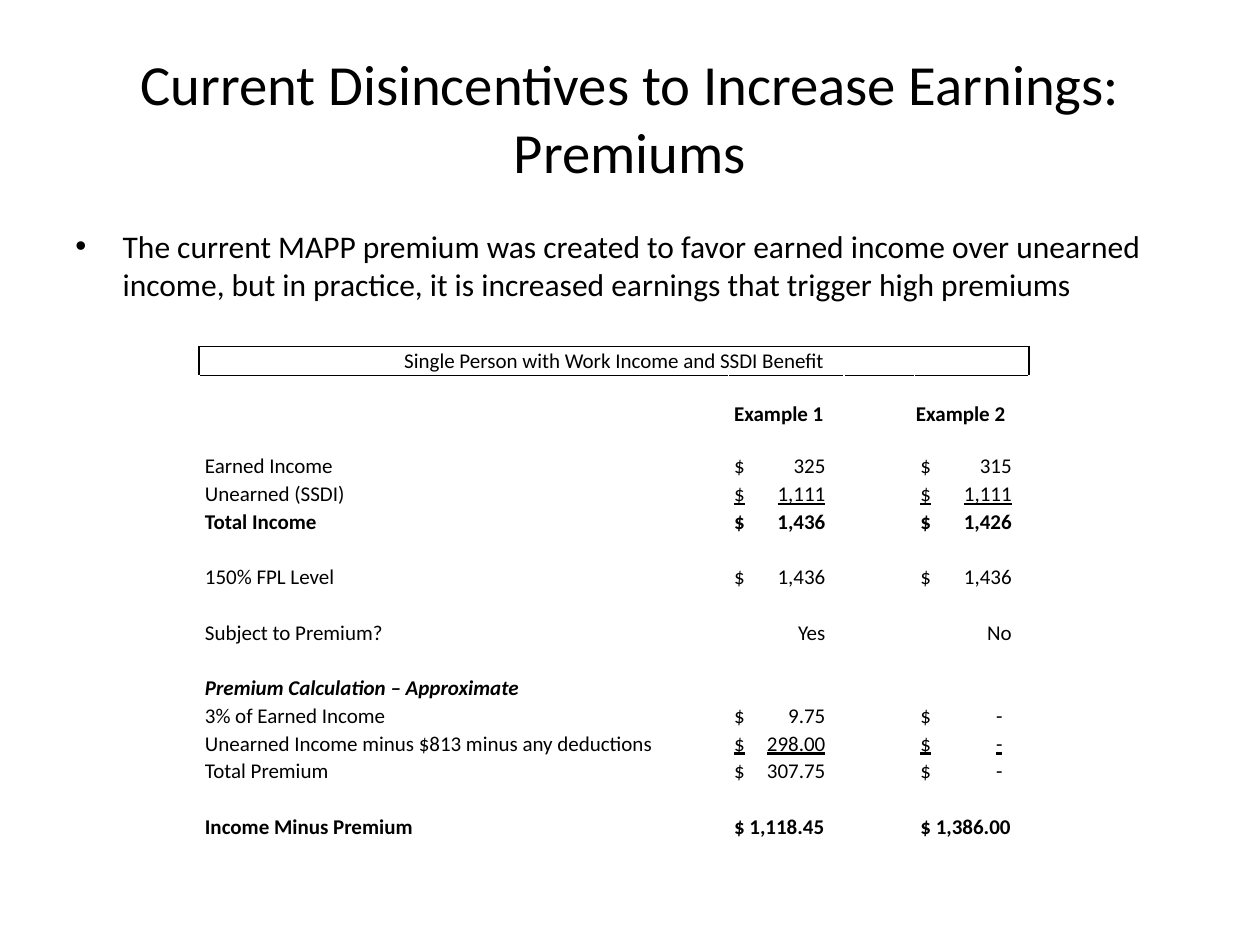
"""Build the slide on premium disincentives with its income comparison table."""
import dataclasses
import typing

import lxml.etree
import pptx
import pptx.dml.color
import pptx.enum.text
import pptx.oxml.ns
import pptx.util

Pt = pptx.util.Pt
qn = pptx.oxml.ns.qn
Align = pptx.enum.text.PP_ALIGN
Anchor = pptx.enum.text.MSO_ANCHOR


@dataclasses.dataclass(frozen=True)
class Theme:
    font: str = "Calibri"
    ink: str = "000000"
    paper: str = "FFFFFF"
    title_size: float = 32.4
    body_size: float = 18
    table_size: float = 12
    spacer_size: float = 10
    border_width: float = 1
    cell_inset: float = 0.72
    text_inset: float = 3.3
    amount_tab: float = 52.2
    dash_tab: float = 47


@dataclasses.dataclass(frozen=True)
class Entry:
    row: int
    label: str
    amounts: tuple[str, ...] = ()
    label_format: dict[str, bool] = dataclasses.field(default_factory=dict)
    amount_format: dict[str, bool] = dataclasses.field(default_factory=dict)


THEME = Theme()
BOLD = {"bold": True}
UNDERLINE = {"underline": True}
COLUMN_WIDTHS = (302.4, 66.2, 40.3, 65.5)
ROW_HEIGHTS = (16.5, *[14.4] * 3, *[15.85] * 14)
AMOUNT_COLUMNS = (1, 3)
ENTRIES = (
    Entry(2, "", ("Example 1", "Example 2"), amount_format=BOLD),
    Entry(4, "Earned Income", ("$\t325", "$\t315")),
    Entry(5, "Unearned (SSDI)", ("$\t1,111", "$\t1,111"), amount_format=UNDERLINE),
    Entry(6, "Total Income", ("$\t1,436", "$\t1,426"), BOLD, BOLD),
    Entry(8, "150% FPL Level", ("$\t1,436", "$\t1,436")),
    Entry(10, "Subject to Premium?", ("\tYes", "\tNo")),
    Entry(12, "Premium Calculation – Approximate", (), {"bold": True, "italic": True}),
    Entry(13, "3% of Earned Income", ("$\t9.75", "$\t-")),
    Entry(14, "Unearned Income minus $813 minus any deductions",
          ("$\t298.00", "$\t-"), amount_format=UNDERLINE),
    Entry(15, "Total Premium", ("$\t307.75", "$\t-")),
    Entry(17, "Income Minus Premium", ("$ 1,118.45", "$ 1,386.00"), BOLD, BOLD),
)


def set_values(target: typing.Any, values: dict[str, typing.Any]) -> None:
    """Set each named attribute on the target."""
    for name, value in values.items():
        setattr(target, name, value)


def write(paragraph: typing.Any, text: str, size: float, **values: bool) -> None:
    """Add one run in the theme font."""
    run = paragraph.add_run()
    run.text = text
    set_values(run.font, {"name": THEME.font, "size": Pt(size), **values})
    run.font.color.rgb = pptx.dml.color.RGBColor.from_string(THEME.ink)


def add_text(slide: typing.Any, box: tuple[float, ...], text: str, size: float,
             anchor: typing.Any, alignment: typing.Any) -> typing.Any:
    """Add a wrapped text box and return its paragraph."""
    shape = slide.shapes.add_textbox(*map(Pt, box))
    set_values(shape.text_frame, {"word_wrap": True, "vertical_anchor": anchor})
    paragraph = shape.text_frame.paragraphs[0]
    paragraph.alignment = alignment
    write(paragraph, text, size)
    return paragraph


def add_bullet(paragraph: typing.Any, indent: float) -> None:
    """Give the paragraph a hanging bullet."""
    properties = paragraph._p.get_or_add_pPr()
    properties.set("marL", str(Pt(indent)))
    properties.set("indent", str(-Pt(indent)))
    lxml.etree.SubElement(properties, qn("a:buFont"), typeface="Arial")
    lxml.etree.SubElement(properties, qn("a:buChar"), char="•")


def add_right_tab(paragraph: typing.Any, position: float) -> None:
    """Give the paragraph one right-aligned tab stop."""
    tabs = lxml.etree.SubElement(paragraph._p.get_or_add_pPr(), qn("a:tabLst"))
    lxml.etree.SubElement(tabs, qn("a:tab"), pos=str(Pt(position)), algn="r")


def set_borders(cell: typing.Any, colors: dict[str, str]) -> None:
    """Draw the four cell borders, ahead of the fill."""
    properties = cell._tc.get_or_add_tcPr()
    for index, side in enumerate("LRTB"):
        line = lxml.etree.Element(qn(f"a:ln{side}"), w=str(Pt(THEME.border_width)))
        fill = lxml.etree.SubElement(line, qn("a:solidFill"))
        lxml.etree.SubElement(fill, qn("a:srgbClr"), val=colors.get(side, THEME.paper))
        properties.insert(index, line)


def fill_cell(cell: typing.Any, text: str, values: dict[str, bool],
              inset: float = THEME.text_inset) -> None:
    """Write cell text, with a tab stop where the text is tabbed."""
    paragraph = cell.text_frame.paragraphs[0]
    cell.margin_left = Pt(inset)
    if "\t" in text:
        add_right_tab(paragraph, THEME.dash_tab if text.endswith("-") else THEME.amount_tab)
    write(paragraph, text, THEME.table_size, **values)


def format_cell(cell: typing.Any, row: int) -> None:
    """Apply the shared cell format and size the empty paragraph."""
    set_values(cell, {"margin_left": Pt(THEME.cell_inset), "margin_right": Pt(THEME.cell_inset),
                      "margin_top": Pt(THEME.cell_inset), "margin_bottom": 0,
                      "vertical_anchor": Anchor.MIDDLE})
    cell.fill.background()
    sides = {0: "LRTB", 1: "T"}.get(row, "")
    set_borders(cell, dict.fromkeys(sides, THEME.ink))
    lxml.etree.SubElement(cell.text_frame.paragraphs[0]._p, qn("a:endParaRPr"),
                          sz=str(int(THEME.spacer_size * 100)))


def add_income_table(slide: typing.Any) -> None:
    """Add the table comparing both examples."""
    frame = slide.shapes.add_table(len(ROW_HEIGHTS), len(COLUMN_WIDTHS), Pt(113.8), Pt(198),
                                   Pt(sum(COLUMN_WIDTHS)), Pt(sum(ROW_HEIGHTS)))
    table = frame.table
    set_values(table, {"first_row": False, "horz_banding": False})
    for column, width in zip(table.columns, COLUMN_WIDTHS):
        column.width = Pt(width)
    for index, height in enumerate(ROW_HEIGHTS):
        table.rows[index].height = Pt(height)
        for cell in table.rows[index].cells:
            format_cell(cell, index)
    heading = table.cell(0, 0)
    heading.merge(table.cell(0, len(COLUMN_WIDTHS) - 1))
    fill_cell(heading, "Single Person with Work Income and SSDI Benefit", {}, THEME.cell_inset)
    heading.text_frame.paragraphs[0].alignment = Align.CENTER
    for entry in ENTRIES:
        if entry.label:
            fill_cell(table.cell(entry.row, 0), entry.label, entry.label_format)
        for column, amount in zip(AMOUNT_COLUMNS, entry.amounts):
            inset = THEME.cell_inset if amount == "Example 2" else THEME.text_inset
            fill_cell(table.cell(entry.row, column), amount, entry.amount_format, inset)


def main() -> None:
    """Build and save the presentation."""
    presentation = pptx.Presentation()
    set_values(presentation, {"slide_width": Pt(720), "slide_height": Pt(540)})
    slide = presentation.slides.add_slide(presentation.slide_layouts[6])
    add_text(slide, (36, 21.6, 648, 90), "Current Disincentives to Increase Earnings: Premiums",
             THEME.title_size, Anchor.MIDDLE, Align.CENTER)
    body = add_text(slide, (36, 126, 648, 356.4),
                    "The current MAPP premium was created to favor earned income over unearned "
                    "income, but in practice, it is increased earnings that trigger high premiums",
                    THEME.body_size, Anchor.TOP, Align.LEFT)
    body.space_before = Pt(3.6)
    add_bullet(body, 27)
    add_income_table(slide)
    presentation.save("out.pptx")


if __name__ == "__main__":
    main()
